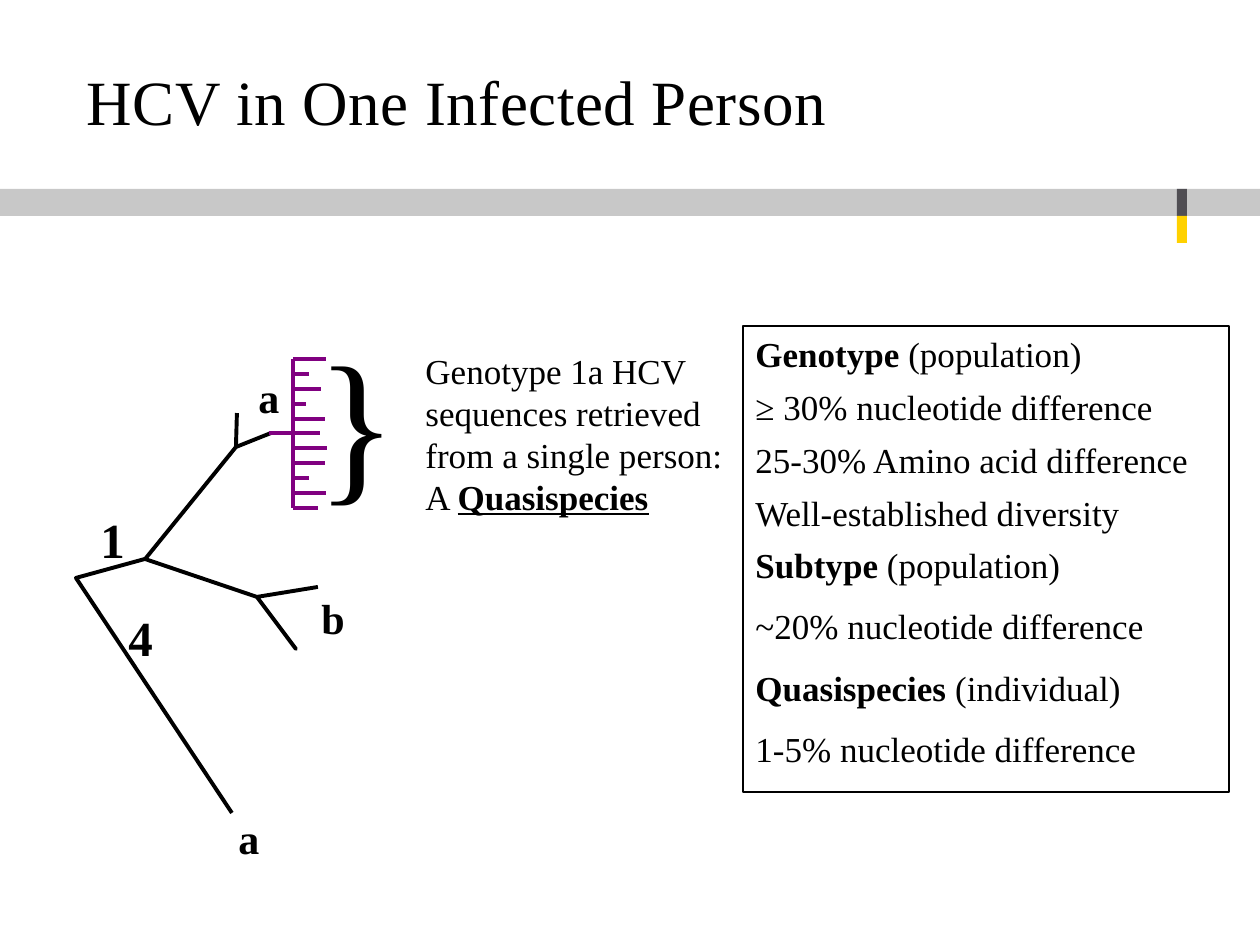
from lxml import etree
from pptx import Presentation
from pptx import util as u
from pptx.dml.color import RGBColor
from pptx.enum import shapes, text
from pptx.oxml.ns import qn

PX = u.Inches(1) / 126
FONT = "Times New Roman"
COLORS = {"ink": "000000", "band": "C8C8C8", "mark": "504E53",
          "accent": "FFD100", "ruler": "800080"}


def px(*lengths):
    return [u.Emu(round(length * PX)) for length in lengths]


def color(name):
    return RGBColor.from_string(COLORS[name])


def write(frame, paras, size, bold=False, wrap=False, before=0, spacings=None,
          anchor=text.MSO_ANCHOR.TOP, tracking=None):
    """Fill a frame; each paragraph is a list of (words, style) spans."""
    frame.word_wrap = wrap
    frame.vertical_anchor = anchor
    for index, spans in enumerate(paras):
        para = frame.paragraphs[0] if index == 0 else frame.add_paragraph()
        para.alignment = text.PP_ALIGN.LEFT
        para.space_before = u.Pt(before)
        para.line_spacing = spacings[index] if spacings else 1.0
        for words, style in spans:
            span = para.add_run()
            span.text = words
            span.font.name, span.font.size = FONT, u.Pt(size)
            span.font.color.rgb = color("ink")
            span.font.bold = bold or "b" in style
            span.font.underline = "u" in style
            if tracking:
                span._r.get_or_add_rPr().set("spc", str(tracking))


def add_text(page, box, paras, size, **options):
    write(page.shapes.add_textbox(*px(*box)).text_frame, paras, size, **options)


def add_rect(page, box, fill=None, line=None):
    rect = page.shapes.add_shape(shapes.MSO_SHAPE.RECTANGLE, *px(*box))
    rect.shadow.inherit = False
    for part, name in ((rect.fill, fill), (rect.line.fill, line)):
        if name:
            part.solid()
            part.fore_color.rgb = color(name)
        else:
            part.background()
    return rect


def add_line(page, start, end):
    line = page.shapes.add_connector(shapes.MSO_CONNECTOR.STRAIGHT, *px(*start, *end))
    line.line.color.rgb = color("ruler")
    line.line.width = u.Pt(2.25)
    etree.SubElement(line._element.spPr, qn("a:effectLst"))


def add_branch(page, points):
    builder = page.shapes.build_freeform(*points[0], scale=PX)
    builder.add_line_segments(points[1:], close=False)
    branch = builder.convert_to_shape()
    branch.shadow.inherit = False
    branch.fill.background()
    branch.line.color.rgb = color("ink")
    branch.line.width = u.Pt(2.25)


def draw_header(page, left, top, width):
    # Band with its two-part marker
    band = 27
    add_rect(page, (left, top, width, band), "band")
    for row, name in enumerate(("mark", "accent")):
        add_rect(page, (left + 1177, top + row * band, 10, band), name)
    # Title
    title = page.shapes.title
    title.left, title.top, title.width, title.height = px(left + 74, top - 144, 1071, 93)
    frame = title.text_frame
    frame.margin_top = frame.margin_bottom = 0
    write(frame, [[("HCV in One Infected Person", "")]], 36, wrap=True,
          anchor=text.MSO_ANCHOR.BOTTOM, tracking=30)


def draw_definitions(page, left, top, width, height):
    paras = [
        [("Genotype", "b"), (" (population)", "")],
        [("≥ 30% nucleotide difference", "")],
        [("25-30% Amino acid difference", "")],
        [("Well-established diversity", "")],
        [("Subtype ", "b"), ("(population)", "")],
        [("~20% nucleotide difference", "")],
        [("Quasispecies ", "b"), ("(individual)", "")],
        [("1-5% nucleotide difference", "")],
    ]
    panel = add_rect(page, (left, top, width, height), line="ink")
    panel.line.width = u.Pt(0.75)
    write(panel.text_frame, paras, 20, wrap=True, before=11,
          spacings=[1.0] + [0.8] * 4 + [1.0] * 3)


def draw_tree(page, left, top):
    # Branches
    lower = [(156, 400), (0, 165), (69, 146), (181, 184), (220, 236), (181, 184), (242, 174)]
    upper = [(70, 145), (160, 34), (195, 20), (160, 34), (161, 0)]
    for points in (lower, upper):
        add_branch(page, [(left + x, top + y) for x, y in points])
    # Genotype and subtype labels
    labels = [("1", 12, 90, 28), ("4", 40, 188, 28), ("a", 170, -48, 24),
              ("a", 150, 393, 24), ("b", 233, 173, 24)]
    for words, x, y, size in labels:
        add_text(page, (left + x, top + y, 49, size * 2.6), [[(words, "")]], size, bold=True)


def draw_quasispecies(page, left, top, height):
    # Comb of sequences: spine, stem and evenly spaced ticks
    ticks = [33, 16, 28, 13, 32, 27, 34, 32, 16, 33, 25]
    gap = height / (len(ticks) - 1)
    add_line(page, (left, top), (left, top + height))
    add_line(page, (left - 24, top + 5 * gap), (left, top + 5 * gap))
    for row, length in enumerate(ticks):
        add_line(page, (left, top + row * gap), (left + length, top + row * gap))
    # Brace and note
    add_text(page, (left + 11, top - 50, 107, 217), [[("}", "")]], 96)
    note = [[("Genotype 1a HCV", "")], [("sequences retrieved", "")],
            [("from a single person:", "")], [("A ", ""), ("Quasispecies", "bu")]]
    add_text(page, (left + 120, top - 16, 333, 183), note, 20)


def main():
    deck = Presentation()
    deck.slide_width, deck.slide_height = px(1260, 945)
    page = deck.slides.add_slide(deck.slide_layouts[5])
    draw_header(page, 0, 189, 1260)
    draw_definitions(page, 743, 326, 486, 466)
    draw_tree(page, 76, 413)
    draw_quasispecies(page, 293, 359, 149)
    deck.save("out.pptx")


if __name__ == "__main__":
    main()
